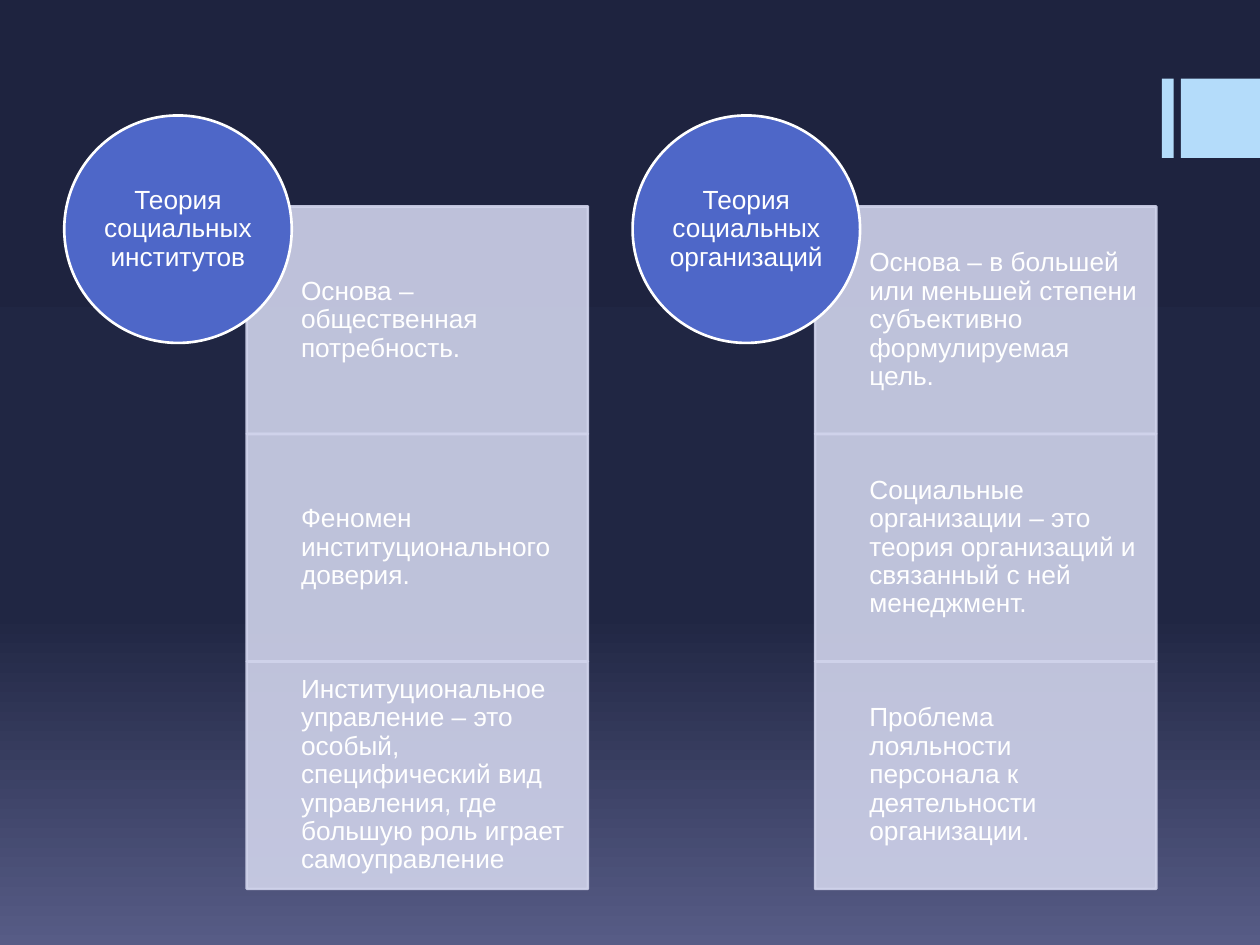
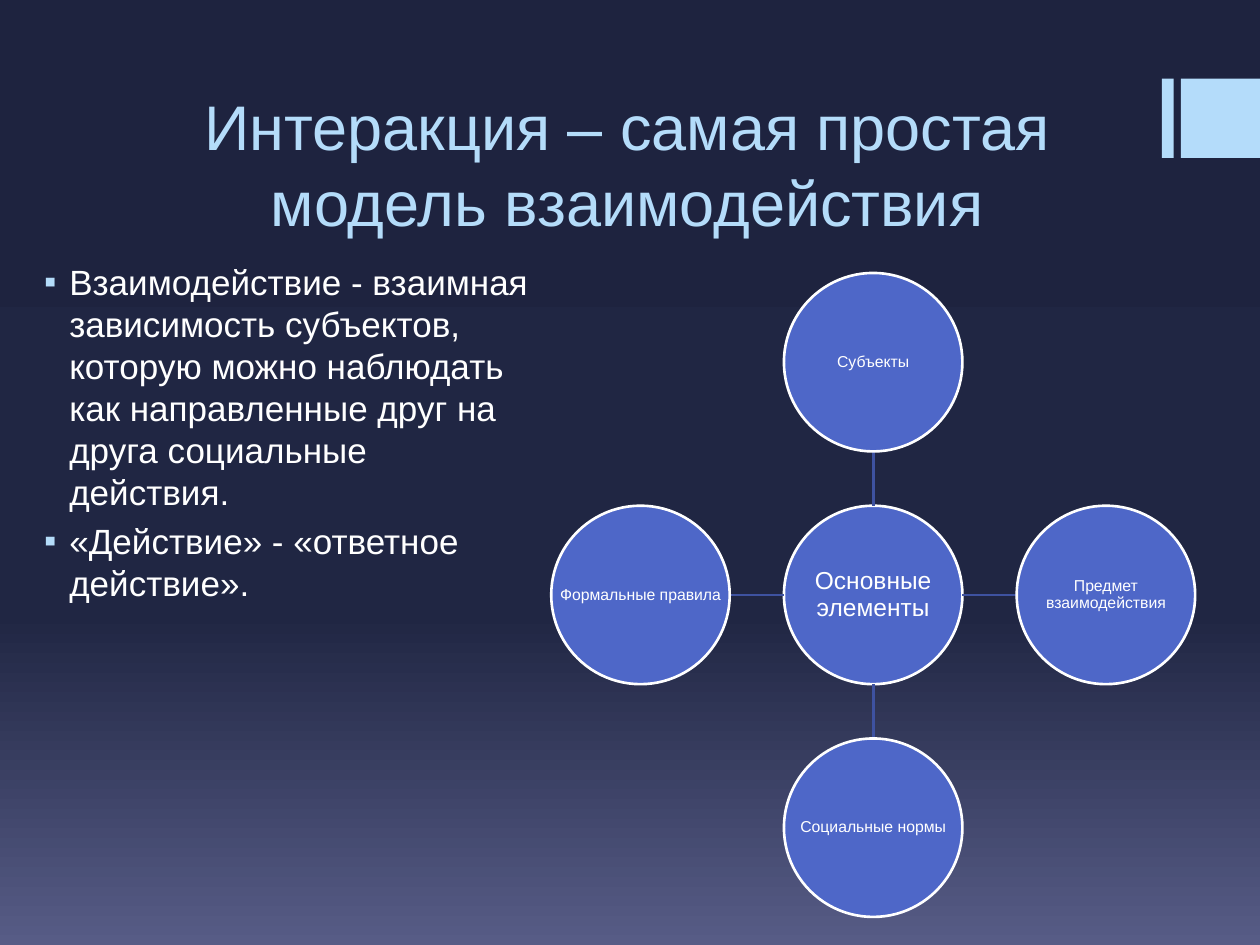
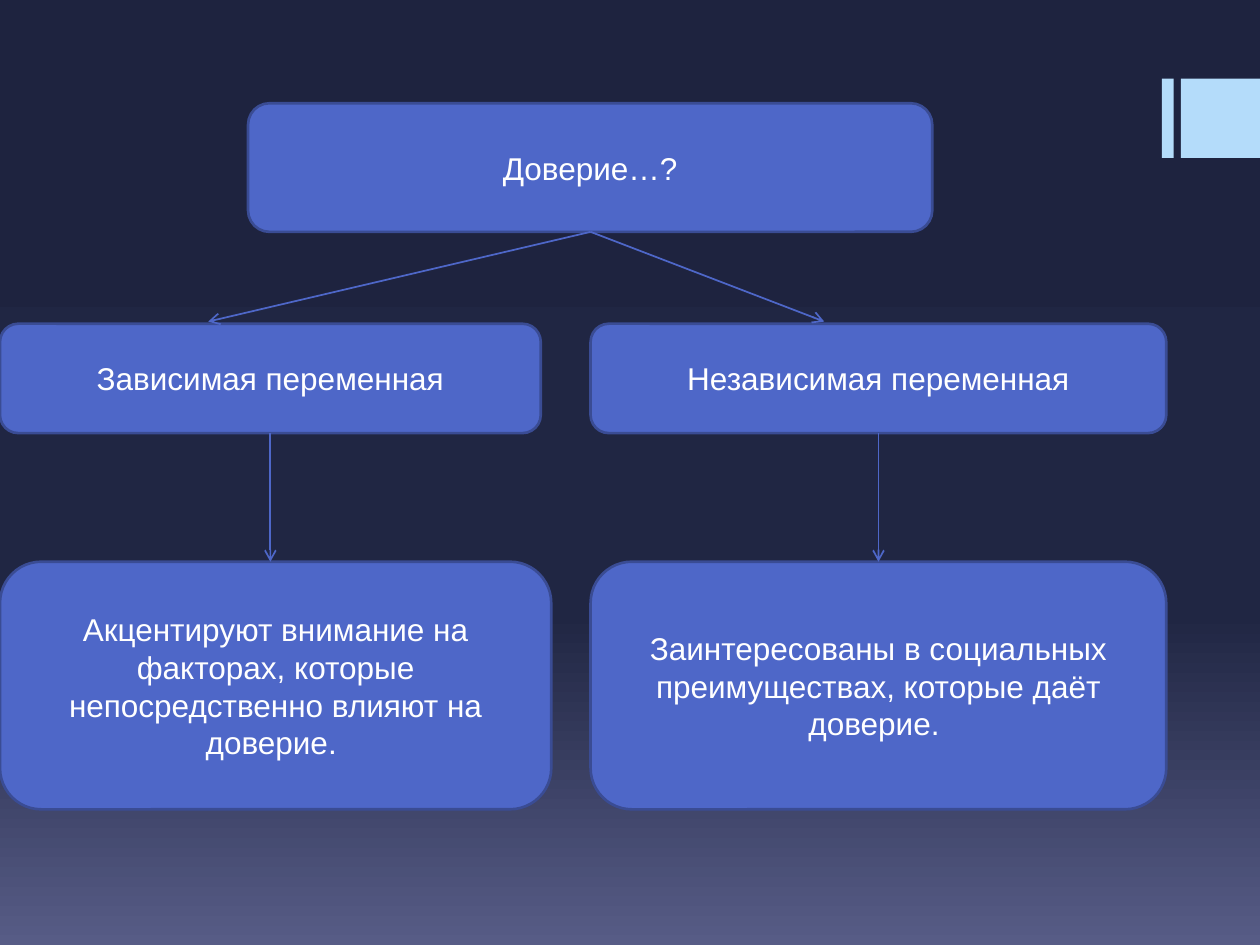
from lxml import etree
from pptx import Presentation
from pptx.dml.color import RGBColor
from pptx.enum.shapes import MSO_CONNECTOR, MSO_SHAPE
from pptx.enum.text import MSO_ANCHOR, PP_ALIGN
from pptx.oxml.ns import qn
from pptx.util import Pt


class Theme:
    font = "Arial"
    white, sky, blue = "FFFFFF", "B4DCFA", "4E67C8"
    pale, edge, spoke = "D0D3EB", "3A4C94", "3E52A0"
    back = [(0, "1E233F"), (65, "202643"), (100, "575C86")]
    title, body, box, card, hub, node = 36, 20, 18, 15, 14, 9
    rule, thin = 1.5, 1


SIZE = (720, 540)
BANDS = [(664, 45, 6.75, 45.25), (674.75, 45, 45.25, 45.25)]

THEORIES = [
    ("Теория социальных институтов", [
        "Основа – общественная потребность.",
        "Феномен институционального доверия.",
        "Институциональное управление – это особый, специфический вид "
        "управления, где большую роль играет самоуправление"]),
    ("Теория социальных организаций", [
        "Основа – в большей или меньшей степени субъективно "
        "формулируемая цель.",
        "Социальные организации – это теория организаций и связанный "
        "с ней менеджмент.",
        "Проблема лояльности персонала к деятельности организации."]),
]

TITLE = "Интеракция – самая простая модель взаимодействия"
POINTS = [
    "Взаимодействие - взаимная зависимость субъектов, которую можно "
    "наблюдать как направленные друг на друга социальные действия.",
    "«Действие» - «ответное действие».",
]
HUB = "Основные элементы"
# Label, direction from the hub, whether the label wraps
NODES = [
    ("Субъекты", (0, -1), False),
    ("Предмет взаимодействия", (1, 0), True),
    ("Социальные нормы", (0, 1), False),
    ("Формальные правила", (-1, 0), False),
]

TRUST = [
    ("Доверие…?", (141.75, 59, 391, 73.5)),
    ("Зависимая переменная", (0, 185, 309, 62.5)),
    ("Независимая переменная", (337.5, 185, 329, 62.5)),
    ("Акцентируют внимание на факторах, которые непосредственно "
     "влияют на доверие. ", (0, 321, 315, 141.5)),
    ("Заинтересованы в социальных преимуществах, которые даёт "
     "доверие. ", (337.5, 321, 329, 141.5)),
]
ARROWS = [
    ((337.5, 132.5), (119, 183.75)),
    ((337.5, 132.5), (471, 183.75)),
    ((154.5, 247.5), (154.5, 321)),
    ((502, 247.5), (502, 321)),
]


def rgb(code):
    return RGBColor.from_string(code)


def pts(*nums):
    return [Pt(n) for n in nums]


def node(parent, tag, **attrs):
    return etree.SubElement(parent, qn(tag), attrs)


def write(para, words, size, color=Theme.white):
    run = para.add_run()
    run.text = words
    run.font.name, run.font.size = Theme.font, Pt(size)
    run.font.color.rgb = rgb(color)


def shape(slide, kind, spot, fill, line=None):
    item = slide.shapes.add_shape(kind, *pts(*spot))
    item.shadow.inherit = False
    item.fill.solid()
    item.fill.fore_color.rgb = rgb(fill)
    if line:
        item.line.color.rgb, item.line.width = rgb(line), Pt(Theme.rule)
    else:
        item.line.fill.background()
    return item


def label(item, words, size, align=PP_ALIGN.CENTER, pads=None, space=None,
          wrap=True):
    """Fill a shape with one paragraph; pads are left, top, right, bottom."""
    frame = item.text_frame
    frame.word_wrap, frame.vertical_anchor = wrap, MSO_ANCHOR.MIDDLE
    if pads:
        (frame.margin_left, frame.margin_top,
         frame.margin_right, frame.margin_bottom) = pts(*pads)
    para = frame.paragraphs[0]
    para.alignment, para.line_spacing = align, space
    write(para, words, size)


def link(slide, start, end, color, width, arrow=False):
    item = slide.shapes.add_connector(
        MSO_CONNECTOR.STRAIGHT, *pts(*start, *end))
    item.line.color.rgb, item.line.width = rgb(color), Pt(width)
    if arrow:
        node(item.line._get_or_add_ln(), "a:tailEnd", type="arrow")
    node(item._element.spPr, "a:effectLst")


def veil(item, share):
    """Make fill and line partly opaque."""
    for color in item._element.spPr.iter(qn("a:srgbClr")):
        node(color, "a:alpha", val=str(share * 1000))


def dress(master, slide):
    """Give the master its gradient and its bands, drawn first on a slide."""
    fill = master.background.fill
    fill.gradient()
    grad = next(master._element.iter(qn("a:gradFill")))
    for part in list(grad):
        grad.remove(part)
    stops = node(grad, "a:gsLst")
    for place, code in Theme.back:
        stop = node(stops, "a:gs", pos=str(place * 1000))
        node(stop, "a:srgbClr", val=code)
    node(grad, "a:lin", ang="5400000", scaled="0")
    for num, spot in enumerate(BANDS):
        band = shape(slide, MSO_SHAPE.RECTANGLE, spot, Theme.sky)
        band._element.nvSpPr.cNvPr.set("id", str(100 + num))
        master.shapes._spTree.append(band._element)


def theories(slide):
    left, top, wide, high, step = 141, 118, 195, 130, 324.75
    for col, (head, cards) in enumerate(THEORIES):
        x = left + col * step
        for row, words in enumerate(cards):
            card = shape(slide, MSO_SHAPE.RECTANGLE,
                         (x, top + row * high, wide, high),
                         Theme.pale, Theme.pale)
            veil(card, 90)
            label(card, words, Theme.card, PP_ALIGN.LEFT,
                  (31, 8.5, 8.5, 8.5), 0.9)
        disc = shape(slide, MSO_SHAPE.OVAL,
                     (x - 104.25, top - 52, high, high),
                     Theme.blue, Theme.white)
        label(disc, head, Theme.card, pads=(0, 0, 0, 0), space=0.9)


def bullets(slide):
    frame = slide.shapes.add_textbox(*pts(14.5, 145.5, 294.5, 380)).text_frame
    frame.word_wrap = True
    for num, words in enumerate(POINTS):
        para = frame.add_paragraph() if num else frame.paragraphs[0]
        para.space_before = Pt(4)
        write(para, words, Theme.body)
        props = para._p.get_or_add_pPr()
        props.set("marL", str(Pt(18)))
        props.set("indent", str(-Pt(14.4)))
        node(node(props, "a:buClr"), "a:srgbClr", val=Theme.sky)
        node(props, "a:buFont", typeface=Theme.font)
        node(props, "a:buChar", char="▪")


def wheel(slide):
    mid, size, reach = (499, 340), 102, 133
    half = size / 2

    def disc(words, x, y, points, wrap):
        item = shape(slide, MSO_SHAPE.OVAL, (x - half, y - half, size, size),
                     Theme.blue, Theme.white)
        label(item, words, points, pads=(0.5,) * 4, space=0.9, wrap=wrap)

    def away(way, far):
        return [m + w * far for m, w in zip(mid, way)]

    disc(HUB, *mid, Theme.hub, True)
    for words, way, wrap in NODES:
        link(slide, away(way, half), away(way, reach - half),
             Theme.spoke, Theme.rule)
        disc(words, *away(way, reach), Theme.node, wrap)


def interaction(slide):
    title = slide.shapes.title
    title.left, title.top, title.width, title.height = pts(70.5, 49, 576, 91)
    frame = title.text_frame
    frame.word_wrap, frame.vertical_anchor = True, MSO_ANCHOR.BOTTOM
    para = frame.paragraphs[0]
    para.alignment = PP_ALIGN.CENTER
    write(para, TITLE, Theme.title, Theme.sky)
    bullets(slide)
    wheel(slide)


def trust(slide):
    for words, spot in TRUST:
        box = shape(slide, MSO_SHAPE.ROUNDED_RECTANGLE, spot,
                    Theme.blue, Theme.edge)
        label(box, words, Theme.box)
    for start, end in ARROWS:
        link(slide, start, end, Theme.blue, Theme.thin, arrow=True)


def main():
    deck = Presentation()
    deck.slide_width, deck.slide_height = pts(*SIZE)
    only, blank = deck.slide_layouts[5], deck.slide_layouts[6]
    pages = [(blank, theories), (only, interaction), (blank, trust)]
    for num, (layout, draw) in enumerate(pages):
        slide = deck.slides.add_slide(layout)
        if num == 0:
            dress(deck.slide_master, slide)
        draw(slide)
    deck.save("out.pptx")


if __name__ == "__main__":
    main()
